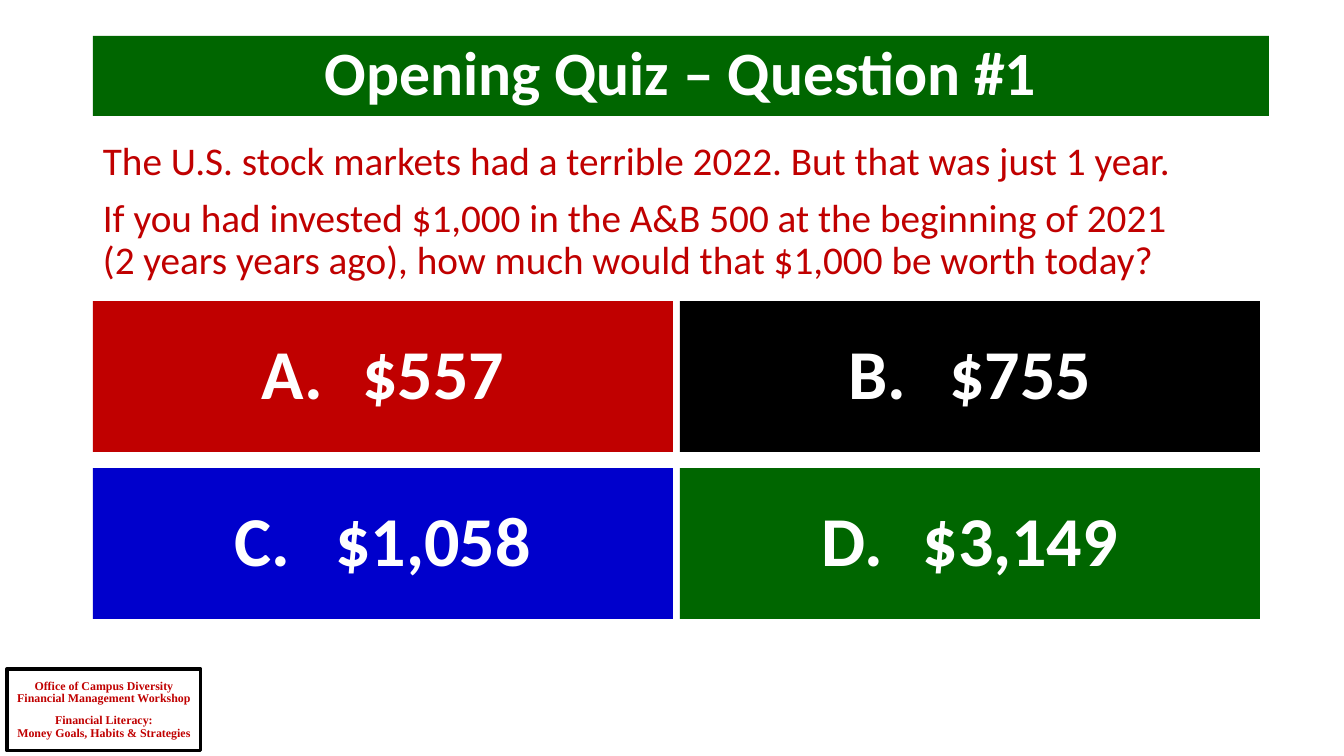
import copy

import pptx
import pptx.dml.color
import pptx.enum.shapes
import pptx.enum.text
import pptx.oxml.ns
import pptx.util

EMU_PER_PX = 914400 / 100.8

GREEN = pptx.dml.color.RGBColor(0x00, 0x66, 0x00)
RED = pptx.dml.color.RGBColor(0xC0, 0x00, 0x00)
BLUE = pptx.dml.color.RGBColor(0x00, 0x00, 0xCC)
BLACK = pptx.dml.color.RGBColor(0x00, 0x00, 0x00)
WHITE = pptx.dml.color.RGBColor(0xFF, 0xFF, 0xFF)

CENTER = pptx.enum.text.PP_ALIGN.CENTER
LEFT = pptx.enum.text.PP_ALIGN.LEFT
MIDDLE = pptx.enum.text.MSO_ANCHOR.MIDDLE
TOP = pptx.enum.text.MSO_ANCHOR.TOP


def px(length):
    return pptx.util.Emu(round(length * EMU_PER_PX))


def write(frame, paragraphs, *, size, color, font="Calibri", bold=False,
          align=CENTER, anchor=MIDDLE, gap=0):
    """Fill a text frame; a vertical tab inside a paragraph breaks its line."""
    frame.word_wrap = True
    frame.vertical_anchor = anchor
    for index, text in enumerate(paragraphs):
        paragraph = frame.add_paragraph() if index else frame.paragraphs[0]
        paragraph.text = text
        paragraph.alignment = align
        paragraph.line_spacing = 0.9
        paragraph.space_before = pptx.util.Pt(gap if index else 0)
        for run in paragraph.runs:
            run.font.name = font
            run.font.size = pptx.util.Pt(size)
            run.font.bold = bold
            run.font.color.rgb = color
        # Line breaks take the run's format, so they keep its line height.
        run_format = paragraph.runs[0].font._element
        for line_break in paragraph._p.findall(pptx.oxml.ns.qn("a:br")):
            line_break.insert(0, copy.deepcopy(run_format))


def add_panel(slide, left, top, width, height, fill=None, border=None):
    panel = slide.shapes.add_shape(
        pptx.enum.shapes.MSO_SHAPE.RECTANGLE,
        px(left), px(top), px(width), px(height))
    panel.shadow.inherit = False
    if fill is None:
        panel.fill.background()
    else:
        panel.fill.solid()
        panel.fill.fore_color.rgb = fill
    if border is None:
        panel.line.fill.background()
    else:
        panel.line.color.rgb = border
        panel.line.width = pptx.util.Pt(2.25)
    return panel.text_frame


def add_question(slide, paragraphs):
    question = slide.shapes.add_textbox(px(93), px(137), px(1197), px(157))
    write(question.text_frame, paragraphs, size=28, color=RED,
          align=LEFT, anchor=TOP, gap=10)


def add_answers(slide, answers):
    """Lay the answers out row by row in two columns."""
    for index, (letter, amount, fill) in enumerate(answers):
        row, column = divmod(index, 2)
        answer = add_panel(slide, 93 + column * 587, 301 + row * 167,
                           580, 151, fill)
        write(answer, [f"{letter}.\t{amount}"], size=50, color=WHITE, bold=True)


def main():
    presentation = pptx.Presentation()
    presentation.slide_width = px(1344)
    presentation.slide_height = px(756)
    slide = presentation.slides.add_slide(presentation.slide_layouts[6])

    workshop = add_panel(slide, 7, 669, 194, 82, border=BLACK)
    workshop.margin_left = workshop.margin_right = 0
    write(workshop,
          ["Office of Campus Diversity\vFinancial Management Workshop",
           "Financial Literacy:\vMoney Goals, Habits & Strategies"],
          size=8.5, color=RED, font="Times New Roman", bold=True, gap=6.5)

    title = add_panel(slide, 93, 36, 1176, 80, GREEN)
    write(title, ["Opening Quiz – Question #1"],
          size=44, color=WHITE, bold=True)

    add_question(slide, [
        "The U.S. stock markets had a terrible 2022. But that was just 1 year.",
        "If you had invested $1,000 in the A&B 500 at the beginning of 2021\v"
        "(2 years years ago), how much would that $1,000 be worth today?",
    ])
    add_answers(slide, [
        ("A", "$557", RED),
        ("B", "$755", BLACK),
        ("C", "$1,058", BLUE),
        ("D", "$3,149", GREEN),
    ])

    presentation.save("out.pptx")


if __name__ == "__main__":
    main()
